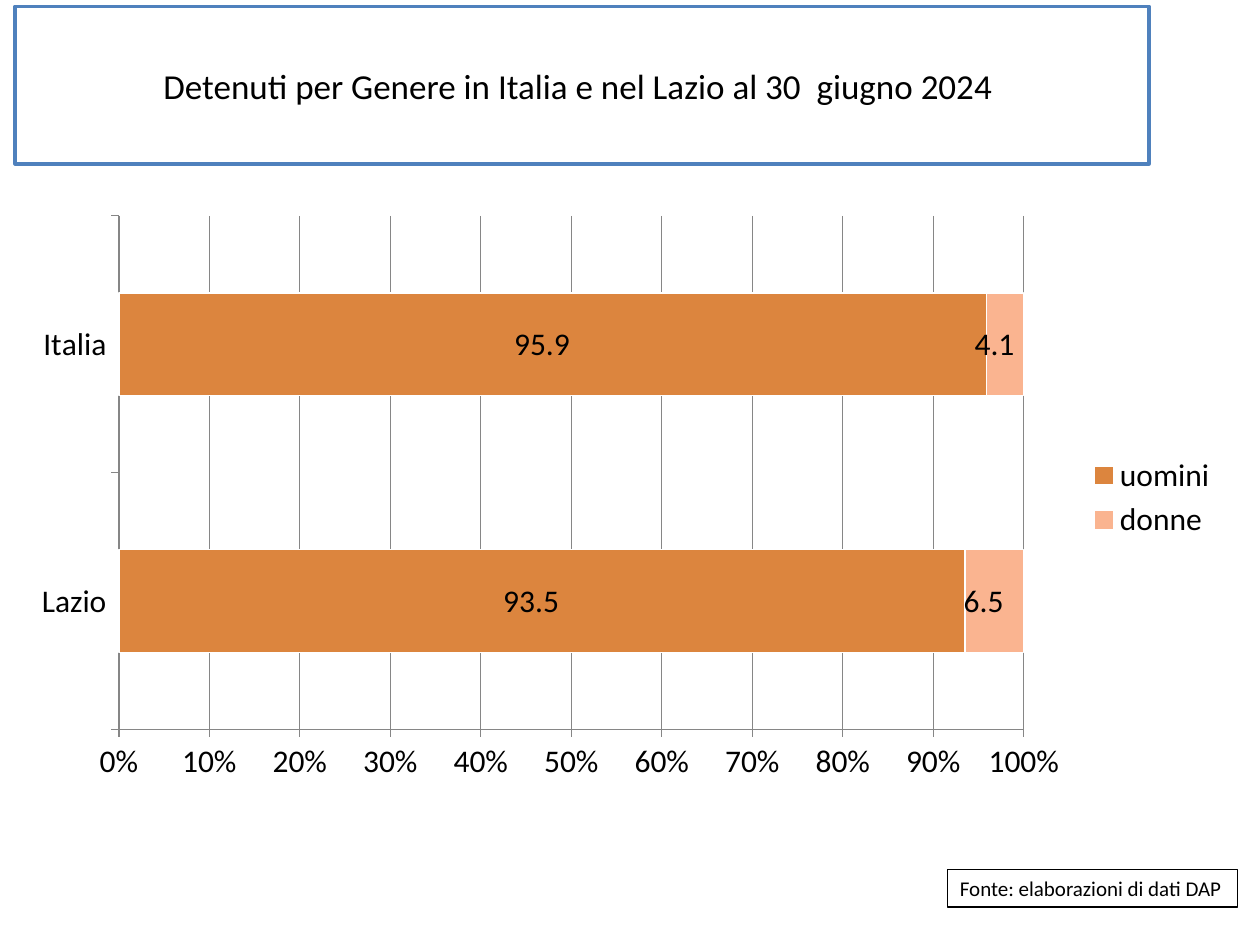
from lxml import etree
from pptx import Presentation
from pptx.chart.data import CategoryChartData
from pptx.dml.color import RGBColor
from pptx.enum.chart import XL_CHART_TYPE, XL_LABEL_POSITION, XL_LEGEND_POSITION, XL_TICK_MARK
from pptx.enum.shapes import MSO_SHAPE
from pptx.enum.text import MSO_ANCHOR, PP_ALIGN
from pptx.oxml.ns import qn
from pptx.util import Inches, Pt

RECTANGLE = MSO_SHAPE.RECTANGLE
BAR_STACKED_100 = XL_CHART_TYPE.BAR_STACKED_100
LABEL_CENTER = XL_LABEL_POSITION.CENTER
LEGEND_RIGHT = XL_LEGEND_POSITION.RIGHT
TICK_OUTSIDE, TICK_NONE = XL_TICK_MARK.OUTSIDE, XL_TICK_MARK.NONE
MIDDLE = MSO_ANCHOR.MIDDLE
LEFT, CENTER = PP_ALIGN.LEFT, PP_ALIGN.CENTER

FONT = "Calibri"
BLACK = RGBColor(0x00, 0x00, 0x00)
WHITE = RGBColor(0xFF, 0xFF, 0xFF)
BLUE = RGBColor(0x4F, 0x81, 0xBD)
GRAY = RGBColor(0x86, 0x86, 0x86)
ORANGE = RGBColor(0xDC, 0x85, 0x3E)
PEACH = RGBColor(0xFA, 0xB4, 0x90)

VALUE_FORMAT = r"_-* #,##0.0\ _€_-;\-* #,##0.0\ _€_-;_-* "
REGIONS = ["Lazio", "Italia"]
GENDERS = [
    ("uomini ", [93.5, 95.9], ORANGE),
    ("donne", [6.5, 4.1], PEACH),
]


def style_font(font, size):
    font.name = FONT
    font.size = Pt(size)
    font.color.rgb = BLACK


def add_framed_text(slide, box, text, size, border, border_width, align=LEFT, wrap=True):
    frame = slide.shapes.add_shape(RECTANGLE, *box)
    frame.shadow.inherit = False
    frame.fill.solid()
    frame.fill.fore_color.rgb = WHITE
    frame.line.color.rgb = border
    frame.line.width = Pt(border_width)
    frame.text_frame.word_wrap = wrap
    frame.text_frame.vertical_anchor = MIDDLE
    paragraph = frame.text_frame.paragraphs[0]
    paragraph.alignment = align
    run = paragraph.add_run()
    run.text = text
    style_font(run.font, size)


def set_plot_layout(chart, **fractions):
    """Fix the inner plot area as fractions of the chart box."""
    plot_area = chart.plots[0]._element.getparent()
    layout = plot_area.find(qn("c:layout"))
    if layout is None:
        layout = etree.Element(qn("c:layout"))
        plot_area.insert(0, layout)
    manual = etree.SubElement(layout, qn("c:manualLayout"))
    settings = {"layoutTarget": "inner", "xMode": "edge", "yMode": "edge", **fractions}
    for tag, value in settings.items():
        etree.SubElement(manual, qn(f"c:{tag}")).set("val", str(value))


def add_gender_chart(slide, box):
    data = CategoryChartData(number_format=VALUE_FORMAT)
    data.categories = REGIONS
    for gender, shares, _ in GENDERS:
        data.add_series(gender, shares)
    chart = slide.shapes.add_chart(BAR_STACKED_100, *box, data).chart
    chart.has_title = False
    style_font(chart.font, 18)
    set_plot_layout(chart, x=0.083, y=0.02, w=0.742, h=0.875)

    # Bars and their values
    bars = chart.plots[0]
    bars.gap_width = 150
    bars.overlap = 100
    bars.vary_by_categories = False
    for series, (_, _, color) in zip(bars.series, GENDERS):
        series.format.fill.solid()
        series.format.fill.fore_color.rgb = color
        series.format.line.color.rgb = WHITE
        series.format.line.width = Pt(0.75)
        labels = series.data_labels
        labels.show_value = True
        labels.position = LABEL_CENTER
        labels.number_format = VALUE_FORMAT
        labels.number_format_is_linked = False
        style_font(labels.font, 18)

    # Axes
    for axis in (chart.category_axis, chart.value_axis):
        axis.major_tick_mark = TICK_OUTSIDE
        axis.minor_tick_mark = TICK_NONE
        axis.format.line.color.rgb = GRAY
        style_font(axis.tick_labels.font, 18)
    percent_axis = chart.value_axis
    percent_axis.minimum_scale = 0
    percent_axis.has_major_gridlines = True
    percent_axis.major_gridlines.format.line.color.rgb = GRAY
    percent_axis.tick_labels.number_format = "0%"
    percent_axis.tick_labels.number_format_is_linked = False

    # Legend
    chart.has_legend = True
    chart.legend.position = LEGEND_RIGHT
    chart.legend.include_in_layout = False
    style_font(chart.legend.font, 18)


def main():
    prs = Presentation()
    prs.slide_width, prs.slide_height = Inches(10), Inches(7.5)
    slide = prs.slides.add_slide(prs.slide_layouts[6])

    # Title
    title_box = Inches(0.12), Inches(0.05), Inches(9), Inches(1.25)
    add_framed_text(slide, title_box,
                    "Detenuti per Genere in Italia e nel Lazio al 30  giugno 2024 ",
                    size=20, border=BLUE, border_width=2, align=CENTER)

    # Source note
    source_box = Inches(7.52), Inches(6.9), Inches(2.3), Inches(0.3)
    add_framed_text(slide, source_box, "Fonte: elaborazioni di dati DAP",
                    size=12, border=BLACK, border_width=0.75, wrap=False)

    # Share of men and women by region
    add_gender_chart(slide, (Inches(0.14), Inches(1.62), Inches(9.68), Inches(4.66)))

    prs.save("out.pptx")


if __name__ == "__main__":
    main()
